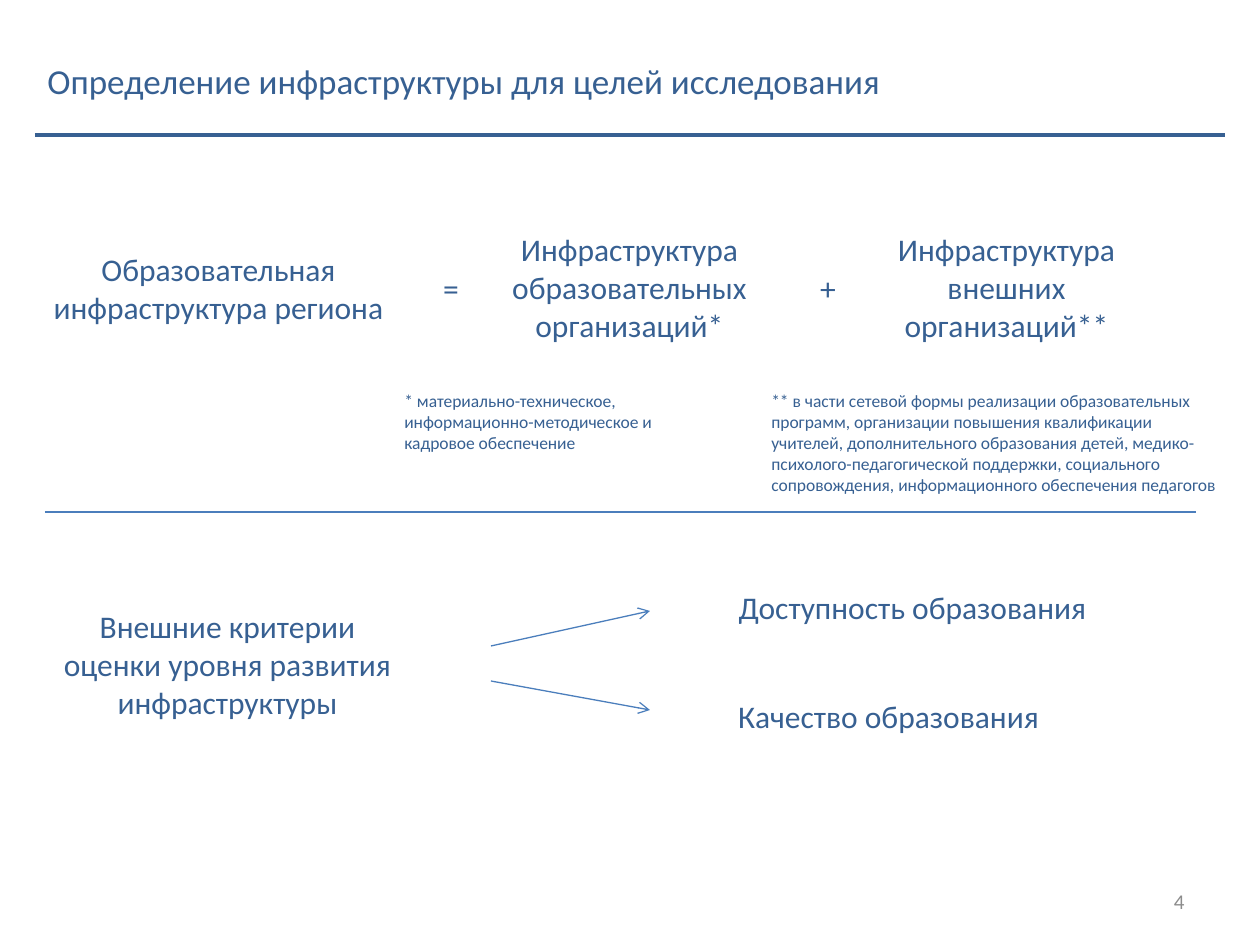
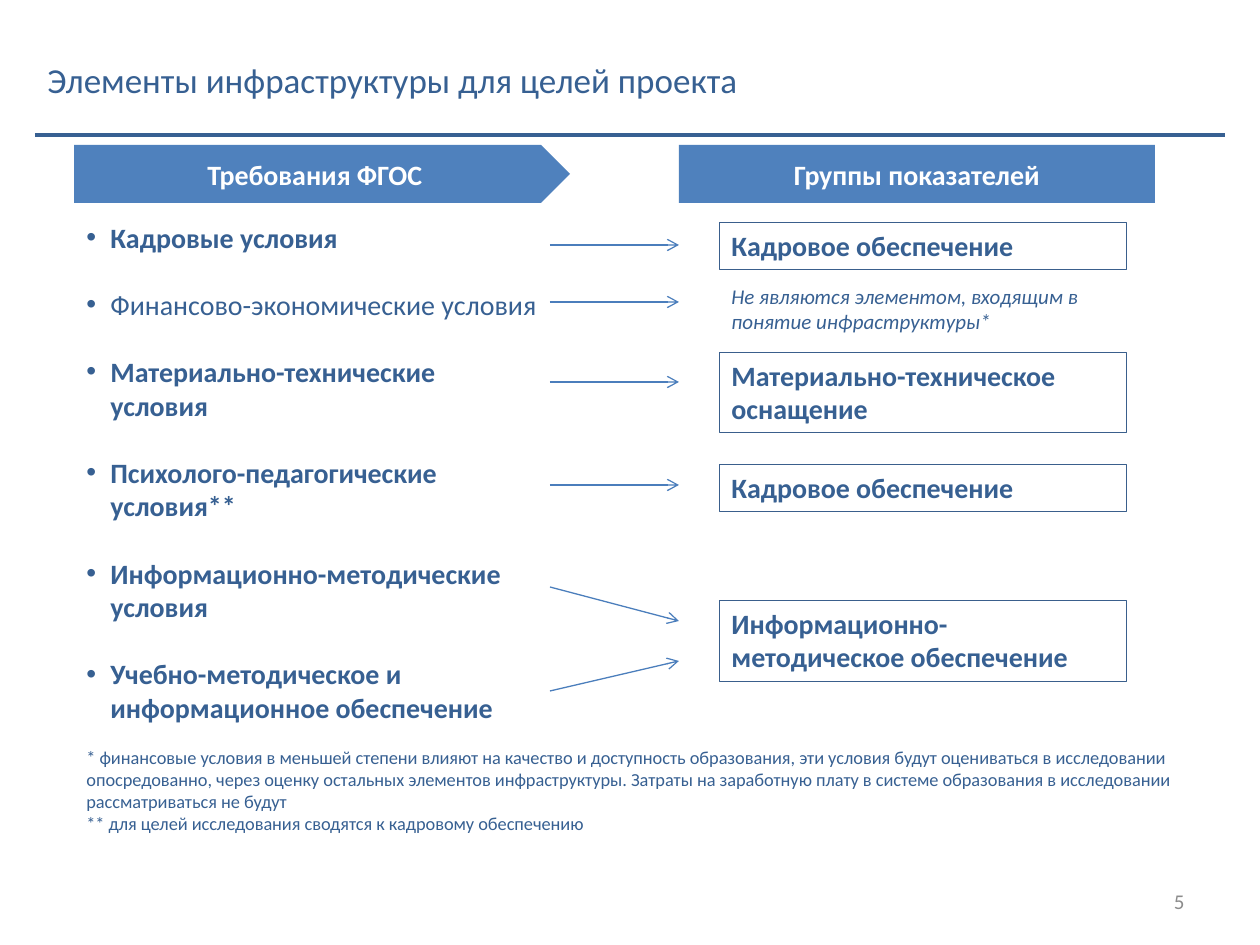
from lxml import etree
from pptx import Presentation
from pptx import util as u
from pptx.dml.color import RGBColor
from pptx.enum import shapes, text
from pptx.oxml.ns import qn

PX = 914400 / 126
FONT = "Calibri"
NAVY = RGBColor(0x37, 0x60, 0x92)
BAND = RGBColor(0x4F, 0x81, 0xBD)
ARROW = RGBColor(0x4B, 0x7E, 0xBC)
FRAME = RGBColor(0x3A, 0x5F, 0x8C)
GREY = RGBColor(0x8C, 0x8C, 0x8C)
WHITE = RGBColor(0xFF, 0xFF, 0xFF)

LEFT, CENTER, RIGHT = text.PP_ALIGN.LEFT, text.PP_ALIGN.CENTER, text.PP_ALIGN.RIGHT
TOP, MIDDLE = text.MSO_ANCHOR.TOP, text.MSO_ANCHOR.MIDDLE
RECT, PENTAGON = shapes.MSO_SHAPE.RECTANGLE, shapes.MSO_SHAPE.PENTAGON


def write(slide, words, place, size=18, color=NAVY, bold=False, italic=False,
          align=LEFT, anchor=TOP, shape=None, fill=None, bullet=False, gap=0):
    """Put one paragraph per line of words in a text box, or in a preset shape."""
    place = [round(n * PX) for n in place]
    if shape is None:
        box = slide.shapes.add_textbox(*place)
    else:
        box = slide.shapes.add_shape(shape, *place)
        box.shadow.inherit = False
        if fill is None:
            box.fill.background()
            box.line.color.rgb = FRAME
            box.line.width = u.Pt(0.25)
        else:
            box.fill.solid()
            box.fill.fore_color.rgb = fill
            box.line.fill.background()
    frame = box.text_frame
    frame.word_wrap = True
    frame.vertical_anchor = anchor
    for i, line in enumerate(words.split("\n")):
        paragraph = frame.add_paragraph() if i else frame.paragraphs[0]
        paragraph.alignment = align
        if i and gap:
            paragraph.space_before = u.Pt(gap)
        if bullet:
            props = paragraph._p.get_or_add_pPr()
            indent = round(24 * PX)
            props.set("marL", str(indent))
            props.set("indent", str(-indent))
            etree.SubElement(props, qn("a:buFont")).set("typeface", "Arial")
            etree.SubElement(props, qn("a:buChar")).set("char", "•")
        run = paragraph.add_run()
        run.text = line
        run.font.name, run.font.size = FONT, u.Pt(size)
        run.font.bold, run.font.italic = bold, italic
        run.font.color.rgb = color
    return frame


def draw_line(slide, ends, color=ARROW, width=0.75, arrow=True):
    line = slide.shapes.add_connector(shapes.MSO_CONNECTOR.STRAIGHT,
                                      *[round(n * PX) for n in ends])
    line.line.color.rgb = color
    line.line.width = u.Pt(width)
    if arrow:
        etree.SubElement(line.line._get_or_add_ln(), qn("a:tailEnd")).set("type", "arrow")
    etree.SubElement(line._element.spPr, qn("a:effectLst"))


deck = Presentation()
deck.slide_width, deck.slide_height = round(1260 * PX), round(945 * PX)

# Shared title, rule and page number
pages = []
for number, title, title_top, title_height in [
    (4, "Определение инфраструктуры для целей исследования", 47, 68),
    (5, "Элементы инфраструктуры для целей проекта", 50, 58),
]:
    page = deck.slides.add_slide(deck.slide_layouts[6])
    write(page, title, (35, title_top, 1201, title_height), size=20, anchor=MIDDLE)
    draw_line(page, (35, 135, 1225, 135), color=NAVY, width=2, arrow=False)
    write(page, str(number), (903, 876, 294, 50), size=12, color=GREY,
          align=RIGHT, anchor=MIDDLE)
    pages.append(page)
definition, elements = pages

# Definition: the sum, its footnotes and the external criteria
for words, place in [
    ("Образовательная инфраструктура региона", (25, 244, 387, 89)),
    ("=", (392, 263, 118, 50)),
    ("Инфраструктура образовательных организаций*", (491, 224, 277, 127)),
    ("+", (769, 263, 118, 50)),
    ("Инфраструктура внешних организаций**", (868, 224, 277, 127)),
    ("Внешние критерии оценки уровня развития инфраструктуры", (44, 601, 367, 127)),
    ("Доступность образования", (699, 582, 427, 50)),
    ("Качество образования", (690, 691, 397, 50)),
]:
    write(definition, words, place, align=CENTER)

write(definition, "* материально-техническое, информационно-методическое и кадровое обеспечение",
      (392, 384, 338, 77), size=10)
write(definition, "** в части сетевой формы реализации образовательных программ, организации "
      "повышения квалификации учителей, дополнительного образования детей, "
      "медико-психолого-педагогической поддержки, социального сопровождения, "
      "информационного обеспечения педагогов", (759, 384, 476, 118), size=10)
draw_line(definition, (45, 512, 1196, 512), arrow=False)
for start, end in [(646, 611), (681, 710)]:
    draw_line(definition, (491, start, 650, end))

# Elements: requirements on the left lead to indicator groups on the right
for heading, place, outline in [
    ("Требования ФГОС", (74, 145, 496, 58), PENTAGON),
    ("Группы показателей", (679, 145, 476, 58), RECT),
]:
    write(elements, heading, place, size=16, color=WHITE, bold=True,
          align=CENTER, anchor=MIDDLE, shape=outline, fill=BAND)

requirements = write(elements, "\n".join([
    "Кадровые условия",
    "Финансово-экономические условия",
    "Материально-технические условия",
    "Психолого-педагогические условия**",
    "Информационно-методические условия",
    "Учебно-методическое и информационное обеспечение",
]), (74, 214, 476, 522), size=16, bold=True, bullet=True, gap=19.2)
requirements.paragraphs[1].runs[0].font.bold = False

for group, top, height in [
    ("Кадровое обеспечение", 222, 47),
    ("Материально-техническое оснащение", 352, 80),
    ("Кадровое обеспечение", 464, 47),
    ("Информационно-методическое обеспечение", 600, 81),
]:
    write(elements, group, (719, top, 407, height), size=16, bold=True, shape=RECT)
write(elements, "Не являются элементом, входящим в понятие инфраструктуры*",
      (719, 277, 407, 63), size=12, italic=True)

for start, end in [(245, 245), (302, 302), (382, 382), (485, 485), (587, 621), (691, 661)]:
    draw_line(elements, (550, start, 679, end))

write(elements, "* финансовые условия в меньшей степени влияют на качество и доступность "
      "образования, эти условия будут оцениваться в исследовании опосредованно, через "
      "оценку остальных элементов инфраструктуры. Затраты на заработную плату в системе "
      "образования в исследовании рассматриваться не будут\n"
      "** для целей исследования сводятся к кадровому обеспечению",
      (74, 740, 1150, 102), size=10.5)

deck.save("out.pptx")
